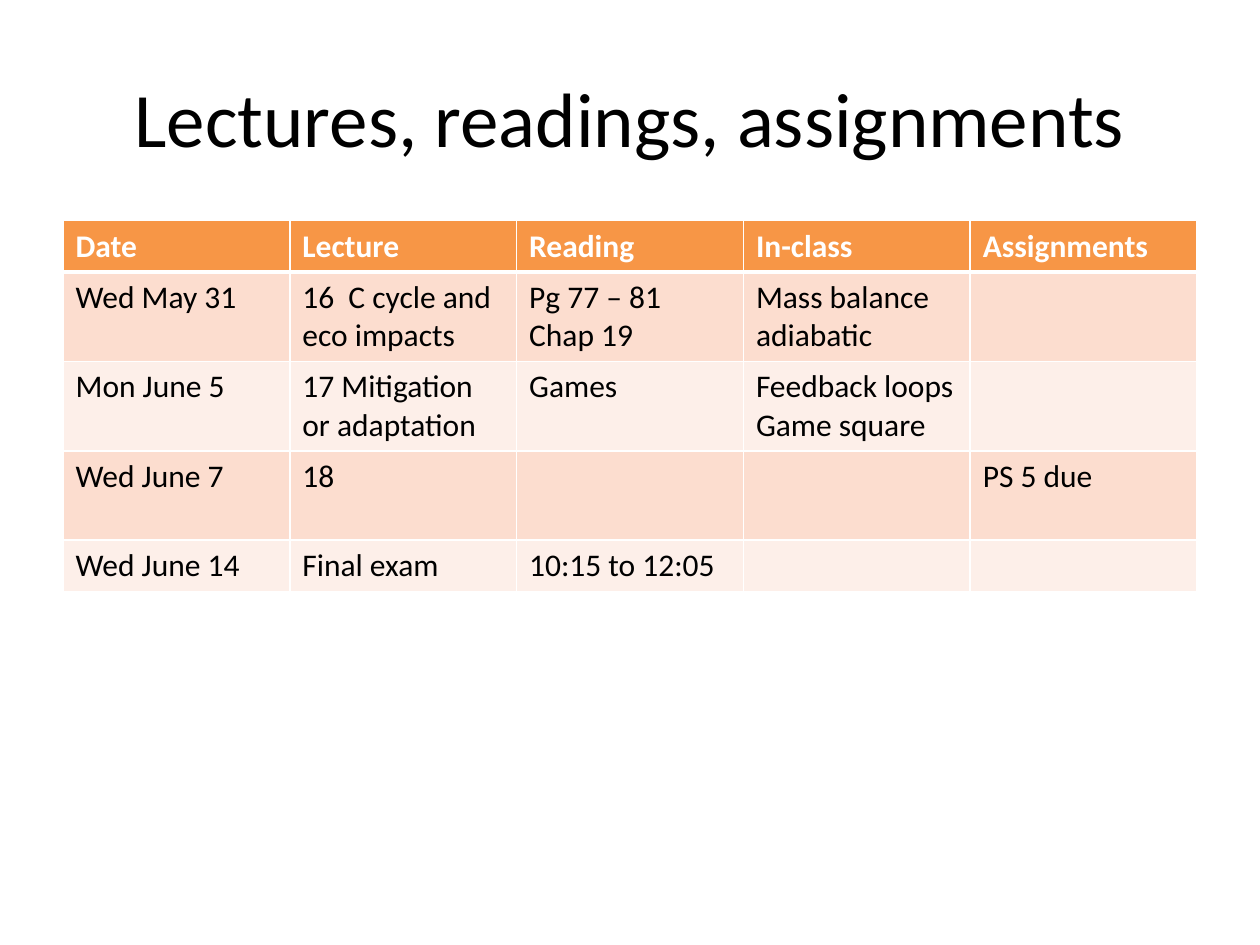
from pptx import Presentation
from pptx.dml.color import RGBColor as RGB
from pptx.enum.text import MSO_ANCHOR as Anchor, PP_ALIGN as Align
from pptx.oxml import parse_xml
from pptx.oxml.ns import nsdecls
from pptx.util import Cm, Pt


def style(par, size, color, bold=False):
    font = par.font
    font.name, font.size, font.bold = "Calibri", Pt(size), bold
    font.color.rgb = RGB.from_string(color)


def edge(cell, side, width):
    cell._tc.get_or_add_tcPr().append(parse_xml(
        f'<a:{side} {nsdecls("a")} w="{Pt(width)}"><a:solidFill>'
        f'<a:srgbClr val="FFFFFF"/></a:solidFill></a:{side}>'))


deck = Presentation()
deck.slide_width, deck.slide_height = Cm(25.4), Cm(19.05)
slide = deck.slides.add_slide(deck.slide_layouts[5])

# Title
title = slide.shapes.title
title.left, title.top, title.width, title.height = Cm(1.27), Cm(0.76), Cm(22.86), Cm(3.18)
frame = title.text_frame
frame.text = "Lectures, readings, assignments"
frame.vertical_anchor = Anchor.MIDDLE
frame.paragraphs[0].alignment = Align.CENTER
style(frame.paragraphs[0], 44, "000000")

# Schedule
rows = [
    ["Date", "Lecture", "Reading", "In-class", "Assignments"],
    ["Wed May 31", "16  C cycle and eco impacts", "Pg 77 – 81\nChap 19",
     "Mass balance\nadiabatic", ""],
    ["Mon June 5", "17 Mitigation or adaptation", "Games",
     "Feedback loops\nGame square", ""],
    ["Wed June 7", "18", "", "", "PS 5 due"],
    ["Wed June 14", "Final exam", "10:15 to 12:05", "", ""],
]
highs = [1.02, 1.8, 1.8, 1.8, 1.02]
fills = ["F79646", "FCDDCF", "FDEFE9", "FCDDCF", "FDEFE9"]
table = slide.shapes.add_table(len(rows), len(rows[0]), Cm(1.27), Cm(4.45),
                               Cm(22.86), Cm(sum(highs))).table

for r, texts in enumerate(rows):
    table.rows[r].height = Cm(highs[r])
    head = r == 0
    for c, text in enumerate(texts):
        cell = table.cell(r, c)
        cell.text = text
        for par in cell.text_frame.paragraphs:
            style(par, 18, "FFFFFF" if head else "000000", head)
        # Borders come before the fill in the cell's XML
        for side in ("lnL", "lnR", "lnT", "lnB"):
            thick = (head and side == "lnB") or (r == 1 and side == "lnT")
            edge(cell, side, 3 if thick else 1)
        cell.fill.solid()
        cell.fill.fore_color.rgb = RGB.from_string(fills[r])

deck.save("out.pptx")
